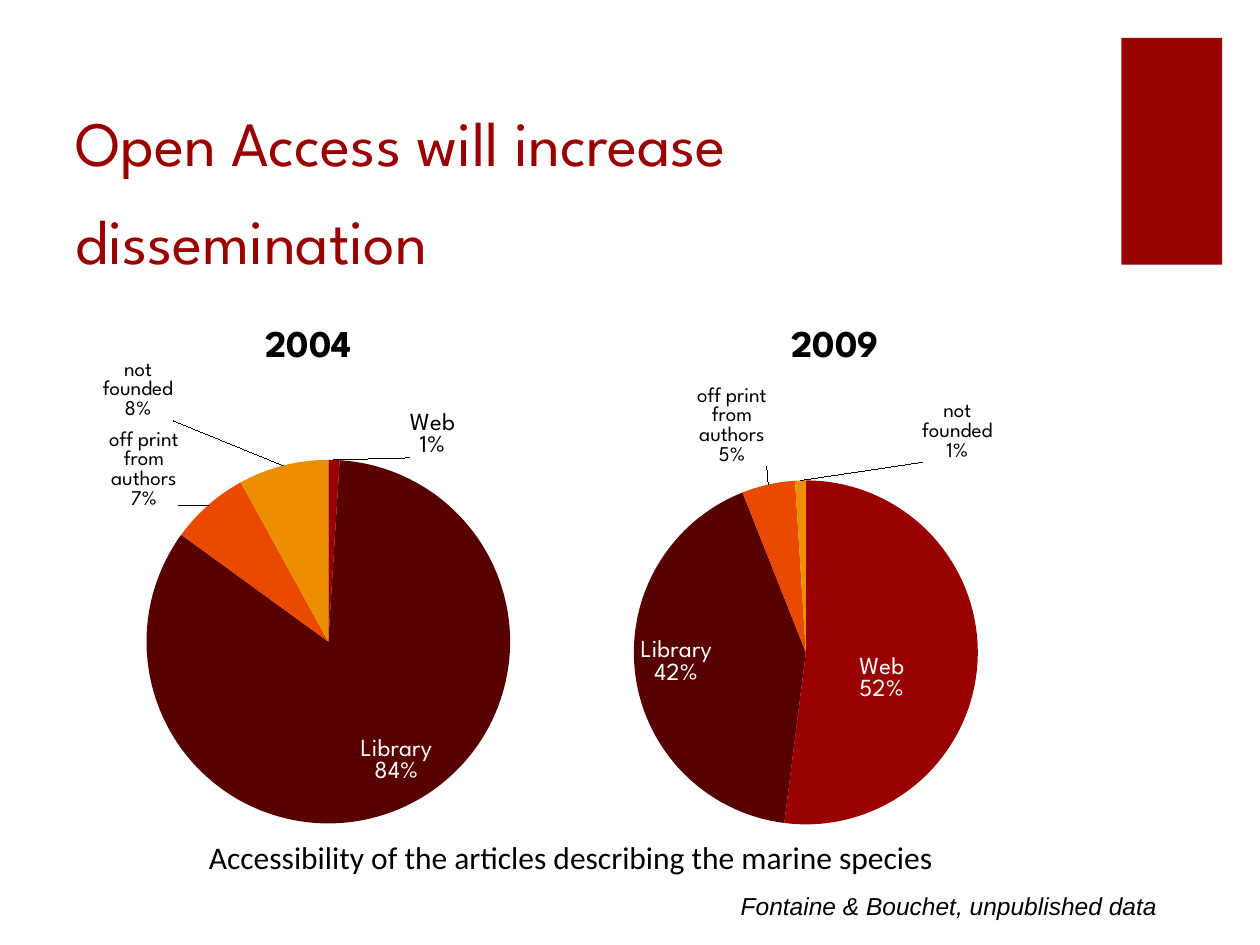
import dataclasses

import pptx
import pptx.chart.data
import pptx.dml.color
import pptx.enum.chart
import pptx.enum.shapes
import pptx.enum.text
import pptx.oxml
import pptx.oxml.ns
import pptx.util

WIDTH, HEIGHT = 10, 7.5
CATEGORIES = ("Web", "Library", "off print from authors", "not founded")
CENTER = pptx.enum.chart.XL_LABEL_POSITION.CENTER
OUTSIDE = pptx.enum.chart.XL_LABEL_POSITION.OUTSIDE_END


@dataclasses.dataclass(frozen=True)
class Theme:
    accent: str = "990000"
    ink: str = "000000"
    paper: str = "FFFFFF"
    slices: tuple = ("990000", "580101", "E94A00", "EB8F00")
    display: str = "League Spartan"
    body: str = "Calibri"
    source: str = "Arial"
    title_size: float = 36
    chart_title_size: float = 21.6
    body_size: float = 18
    label_size: float = 14
    small_size: float = 12


THEME = Theme()


def color(value):
    return pptx.dml.color.RGBColor.from_string(value)


def box(left, top, width, height):
    """Turn shares of the slide into lengths."""
    return [pptx.util.Inches(share * side) for share, side in
            zip((left, top, width, height), (WIDTH, HEIGHT) * 2)]


def style_font(font, name, size, value, bold=False, italic=False):
    font.name, font.size = name, pptx.util.Pt(size)
    font.bold, font.italic = bold, italic
    font.color.rgb = color(value)


def add_accent_block(slide, place):
    shape = slide.shapes.add_shape(
        pptx.enum.shapes.MSO_SHAPE.RECTANGLE, *box(*place))
    shape.shadow.inherit = False
    shape.fill.solid()
    shape.fill.fore_color.rgb = color(THEME.accent)
    shape.line.fill.background()


def add_text(slide, place, text, name, size, value, italic=False, wrap=False):
    frame = slide.shapes.add_textbox(*box(*place)).text_frame
    frame.word_wrap = wrap
    if not wrap:
        frame.auto_size = pptx.enum.text.MSO_AUTO_SIZE.SHAPE_TO_FIT_TEXT
    run = frame.paragraphs[0].add_run()
    run.text = text
    style_font(run.font, name, size, value, italic=italic)
    return frame


def manual_layout(modes, **shares):
    """Build a chart layout element from shares of the chart's size."""
    namespace = pptx.oxml.ns.nsdecls("c")
    values = "".join(f'<c:{key} val="{share}"/>' for key, share in shares.items())
    return pptx.oxml.parse_xml(
        f"<c:layout {namespace}><c:manualLayout>{modes}{values}"
        "</c:manualLayout></c:layout>")


def set_plot_area(chart, x, y, w, h):
    modes = ('<c:layoutTarget val="inner"/><c:xMode val="edge"/>'
             '<c:yMode val="edge"/>')
    plot_area = chart.plots[0]._element.getparent()
    for old in plot_area.findall(pptx.oxml.ns.qn("c:layout")):
        plot_area.remove(old)
    plot_area.insert(0, manual_layout(modes, x=x, y=y, w=w, h=h))


def style_label(point, position, size, value, shift):
    """Show category and percentage, moved from the default place by shift."""
    label = point.data_label
    style_font(label.font, THEME.display, size, value)
    label.position = position
    element = label._dLbl
    element.insert(1, manual_layout("", x=shift[0], y=shift[1]))
    for tag, shown in (("showVal", 0), ("showCatName", 1), ("showPercent", 1)):
        element.find(pptx.oxml.ns.qn(f"c:{tag}")).set("val", str(shown))
    separator = pptx.oxml.parse_xml(
        f'<c:separator {pptx.oxml.ns.nsdecls("c")}>\n</c:separator>')
    element.find(pptx.oxml.ns.qn("c:showBubbleSize")).addnext(separator)


def add_pie(slide, place, year, values, plot_area, labels):
    data = pptx.chart.data.CategoryChartData(number_format="0")
    data.categories = CATEGORIES
    data.add_series("Series 1", values)
    chart = slide.shapes.add_chart(
        pptx.enum.chart.XL_CHART_TYPE.PIE, *box(*place), data).chart
    style_font(chart.font, THEME.display, THEME.body_size, THEME.ink)
    chart.has_legend = False
    chart.has_title = True
    run = chart.chart_title.text_frame.paragraphs[0].add_run()
    run.text = year
    style_font(run.font, THEME.display, THEME.chart_title_size, THEME.ink, bold=True)
    set_plot_area(chart, *plot_area)

    plot = chart.plots[0]
    plot.vary_by_categories = True
    plot.has_data_labels = True
    plot.data_labels.show_value = False
    plot.data_labels.show_category_name = True
    plot.data_labels.show_percentage = True
    for index, (fill, label) in enumerate(zip(THEME.slices, labels)):
        point = plot.series[0].points[index]
        point.format.fill.solid()
        point.format.fill.fore_color.rgb = color(fill)
        point.format.line.fill.background()
        style_label(point, *label)


def main():
    presentation = pptx.Presentation()
    presentation.slide_width = pptx.util.Inches(WIDTH)
    presentation.slide_height = pptx.util.Inches(HEIGHT)
    slide = presentation.slides.add_slide(presentation.slide_layouts[6])

    # Accent block and title
    add_accent_block(slide, (0.89, 0.04, 0.08, 0.24))
    title = add_text(slide, (0.05, 0.13, 0.81, 0.17),
                     "Open Access will increase dissemination",
                     THEME.display, THEME.title_size, THEME.accent, wrap=True)
    title.vertical_anchor = pptx.enum.text.MSO_ANCHOR.BOTTOM
    title.paragraphs[0].line_spacing = 1.3

    # One pie per year, in two equal columns
    large, small = THEME.label_size, THEME.small_size
    ink, paper = THEME.ink, THEME.paper
    pies = (
        ("2004", (1, 84, 7, 8), (0.17, 0.29, 0.74, 0.68), (
            (OUTSIDE, large, ink, (0.2, 0.01)),
            (CENTER, large, paper, (0.06, 0.07)),
            (OUTSIDE, small, ink, (-0.05, 0.02)),
            (OUTSIDE, small, ink, (-0.22, -0.07)))),
        ("2009", (52, 42, 5, 1), (0.09, 0.33, 0.7, 0.64), (
            (CENTER, large, paper, (-0.02, 0.04)),
            (CENTER, large, paper, (-0.09, 0)),
            (OUTSIDE, small, ink, (0, -0.02)),
            (OUTSIDE, small, ink, (0.32, -0.02)))),
    )
    for column, pie in enumerate(pies):
        add_pie(slide, (0.05 + 0.418 * column, 0.32, 0.39, 0.57), *pie)

    # Caption and source
    add_text(slide, (0.156, 0.88, 0.6, 0.05),
             "Accessibility of the articles describing the marine species",
             THEME.body, THEME.body_size, ink)
    add_text(slide, (0.578, 0.936, 0.358, 0.045),
             "Fontaine & Bouchet, unpublished data",
             THEME.source, THEME.label_size, ink, italic=True)

    presentation.save("out.pptx")


if __name__ == "__main__":
    main()
